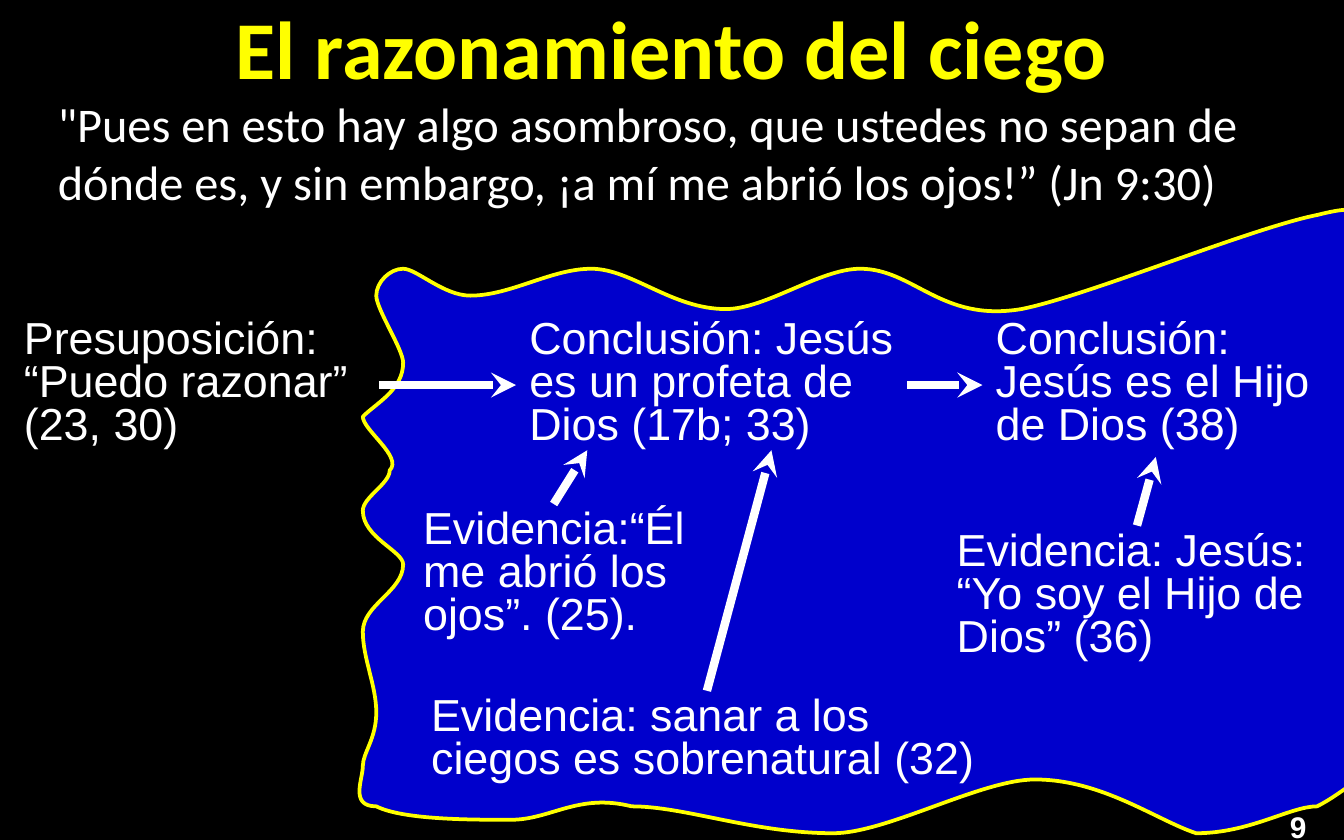
import pptx
import pptx.dml.color
import pptx.enum.shapes
import pptx.enum.text
import pptx.oxml
import pptx.oxml.ns
import pptx.util

CELL = pptx.util.Inches(0.1)
COLUMNS, ROWS = 100, 62.5
WHITE, YELLOW, BLUE, BLACK = "FFFFFF", "FFFF00", "0000CC", "000000"
TOP, LEFT, BOTTOM, RIGHT = range(4)

REGION_START = (101, 17.6)
REGION_CURVES = [
    [(101.3, 16.2), (101.7, 14.8), (97.5, 15.7)],
    [(93.3, 16.6), (81.2, 22.3), (75.7, 23)],
    [(70.2, 23.7), (68, 20), (64.4, 20)],
    [(60.7, 19.9), (56.9, 22.7), (53.6, 22.7)],
    [(50.2, 22.7), (47.3, 20.2), (44.2, 20.1)],
    [(41.2, 20.1), (37.7, 22.4), (35.4, 22.3)],
    [(33, 22.3), (31.2, 20.1), (30, 20)],
    [(28.8, 19.9), (28.2, 20.6), (28.1, 21.8)],
    [(28.1, 23.1), (29.9, 25.9), (29.8, 27.4)],
    [(29.6, 28.9), (27.5, 29.5), (27.4, 30.8)],
    [(27.4, 32.1), (29.5, 33.7), (29.4, 35)],
    [(29.4, 36.3), (27.3, 37.2), (27.3, 38.5)],
    [(27.4, 39.7), (29.8, 41.1), (29.8, 42.5)],
    [(29.7, 44), (27.1, 45.3), (26.9, 47.1)],
    [(26.7, 48.8), (28.5, 51.3), (28.5, 52.9)],
    [(28.4, 54.6), (26.7, 55.6), (26.7, 56.9)],
    [(26.7, 58.1), (26.5, 59.5), (28.3, 60.2)],
    [(30.2, 60.9), (34.6, 61.2), (37.8, 61)],
    [(41, 60.9), (43.4, 59.3), (47.3, 59.5)],
    [(51.3, 59.6), (56.5, 62.3), (61.5, 62.1)],
    [(66.5, 61.8), (72.8, 58), (77.4, 57.9)],
    [(82.1, 57.8), (85.9, 61.3), (89.3, 61.5)],
    [(92.6, 61.8), (95.5, 60.2), (97.6, 59.6)],
    [(99.6, 59), (102.5, 57.1), (103.2, 56.9)],
    [(104.1, 56.4), (101.1, 17.7), (101, 17.6)],
]


def cells(*counts):
    return [round(count * CELL) for count in counts]


def rgb(color):
    return pptx.dml.color.RGBColor.from_string(color)


def write(box, text, size, font, color=WHITE, bold=False):
    frame = box.text_frame
    frame.text = text
    frame.word_wrap = True
    frame.auto_size = pptx.enum.text.MSO_AUTO_SIZE.NONE
    paragraph = frame.paragraphs[0]
    style = paragraph.runs[0].font
    style.size = pptx.util.Pt(size)
    style.name = font
    style.bold = bold
    style.color.rgb = rgb(color)
    return paragraph


def place(placeholder, *area):
    (placeholder.left, placeholder.top,
     placeholder.width, placeholder.height) = cells(*area)


def add_statement(slide, text, *area):
    statement = slide.shapes.add_textbox(*cells(*area))
    write(statement, text, 24, "Arial").line_spacing = 0.8
    return statement


def add_region(slide):
    builder = slide.shapes.build_freeform(*REGION_START, scale=CELL)
    builder.add_line_segments(
        [point for curve in REGION_CURVES for point in curve], close=True)
    region = builder.convert_to_shape()
    region.shadow.inherit = False
    region.fill.solid()
    region.fill.fore_color.rgb = rgb(BLUE)
    region.line.color.rgb = rgb(YELLOW)
    region.line.width = pptx.util.Pt(2)
    lines = list(region._element.iter(pptx.oxml.ns.qn("a:lnTo")))
    for first, second, third in zip(lines[::3], lines[1::3], lines[2::3]):
        curve = pptx.oxml.parse_xml(
            f'<a:cubicBezTo {pptx.oxml.ns.nsdecls("a")}/>')
        first.addprevious(curve)
        for line in (first, second, third):
            curve.append(line[0])
            line.getparent().remove(line)
    slide.shapes._spTree.insert(2, region._element)


def add_arrow(slide, start, end, source=None, target=None):
    arrow = slide.shapes.add_connector(
        pptx.enum.shapes.MSO_CONNECTOR.STRAIGHT, *cells(*start, *end))
    if source:
        arrow.begin_connect(*source)
    if target:
        arrow.end_connect(*target)
    arrow.line.color.rgb = rgb(WHITE)
    arrow.line.width = pptx.util.Pt(4.5)
    namespace = pptx.oxml.ns.nsdecls("a")
    arrow.line._get_or_add_ln().append(
        pptx.oxml.parse_xml(f'<a:tailEnd {namespace} type="stealth"/>'))
    arrow._element.spPr.append(
        pptx.oxml.parse_xml(f'<a:effectLst {namespace}/>'))


def add_heading(slide):
    title = slide.shapes.title
    place(title, 7.5, 0.7, 85, 5.6)
    title.text_frame.vertical_anchor = pptx.enum.text.MSO_ANCHOR.MIDDLE
    heading = write(title, "El razonamiento del ciego", 44, "Calibri", YELLOW, True)
    heading.alignment = pptx.enum.text.PP_ALIGN.CENTER

    verse = slide.placeholders[1]
    place(verse, 3.3, 6.5, 95.6, 10.6)
    quote = write(
        verse,
        '"Pues en esto hay algo asombroso, que ustedes no sepan de dónde es, '
        'y sin embargo, ¡a mí me abrió los ojos!” (Jn 9:30)',
        25.9, "Calibri")
    properties = quote._p.get_or_add_pPr()
    properties.set("marL", "0")
    properties.set("indent", "0")
    properties.append(pptx.oxml.parse_xml(
        f'<a:buNone {pptx.oxml.ns.nsdecls("a")}/>'))


def add_argument(slide):
    premise = add_statement(
        slide, "Presuposición: “Puedo razonar” (23, 30)", 0.8, 23.3, 27.4, 10.7)
    prophet = add_statement(
        slide, "Conclusión: Jesús es un profeta de Dios (17b; 33)",
        38.4, 23.3, 29.1, 10.7)
    son = add_statement(
        slide, "Conclusión: Jesús es el Hijo de Dios (38)", 73.1, 23.3, 25.8, 10.7)
    add_statement(
        slide, "Evidencia:“Él me abrió los ojos”. (25).", 30.5, 37.5, 23.9, 10.7)
    claim = add_statement(
        slide, "Evidencia: Jesús: “Yo soy el Hijo de Dios” (36)",
        70.2, 39.1, 28.8, 10.7)
    healing = add_statement(
        slide, "Evidencia: sanar a los ciegos es sobrenatural (32)",
        31.1, 51.4, 43, 7.5)

    add_arrow(slide, (28.3, 28.6), (38.4, 28.6), (premise, RIGHT), (prophet, LEFT))
    add_arrow(slide, (67.5, 28.6), (73.1, 28.6), (prophet, RIGHT), (son, LEFT))
    add_arrow(slide, (84.6, 39.1), (86, 34), (claim, TOP), (son, BOTTOM))
    add_arrow(slide, (41.2, 37.5), (43.7, 33.5))
    add_arrow(slide, (52.6, 51.4), (57.4, 33.5), (healing, TOP))


def main():
    deck = pptx.Presentation()
    deck.slide_width, deck.slide_height = cells(COLUMNS, ROWS)
    slide = deck.slides.add_slide(deck.slide_layouts[1])
    slide.background.fill.solid()
    slide.background.fill.fore_color.rgb = rgb(BLACK)
    add_region(slide)
    add_heading(slide)
    page_number = slide.shapes.add_textbox(*cells(95, 59.7, 5, 2.8))
    write(page_number, "9", 16, "Arial", bold=True)
    add_argument(slide)
    deck.save("out.pptx")


if __name__ == "__main__":
    main()
